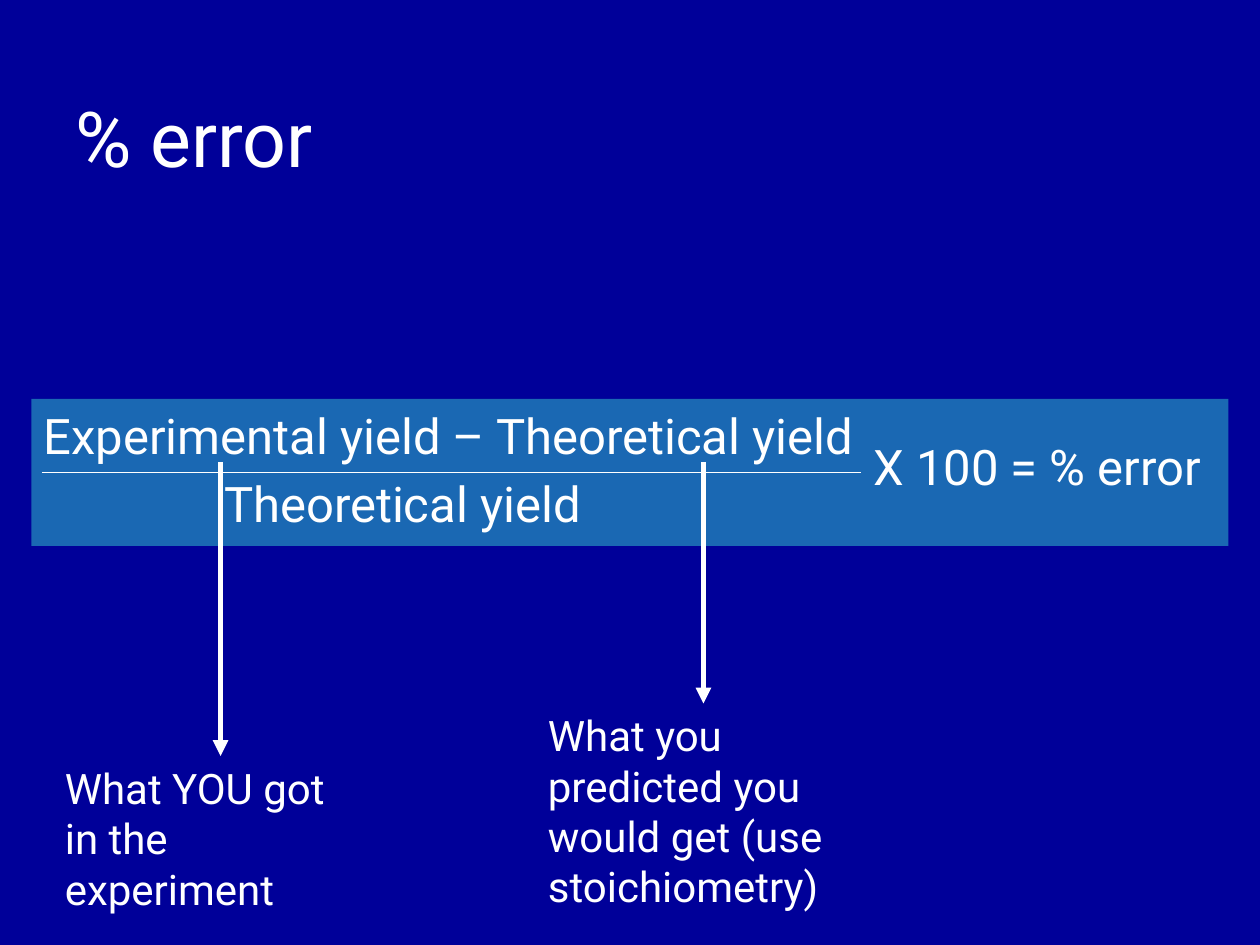
from lxml import etree
from pptx import Presentation, util as u
from pptx.dml.color import RGBColor
from pptx.enum import shapes, text
from pptx.oxml.ns import qn

COLUMNS, ROWS = 120, 90
CELL = u.Inches(10) // COLUMNS
FONT, WHITE, NAVY, TEAL = "Roboto", "FFFFFF", "000099", "33CCCC"


def color(value):
    """Turn a hex string into a colour."""
    return RGBColor.from_string(value)


def grid(*cells):
    """Turn grid cells into lengths."""
    return [cell * CELL for cell in cells]


def write(shape, content, size, anchor=text.MSO_ANCHOR.TOP):
    """Set left-aligned white text in a shape and return its paragraphs."""
    frame = shape.text_frame
    frame.text = content
    frame.word_wrap = True
    frame.vertical_anchor = anchor
    for paragraph in frame.paragraphs:
        paragraph.alignment = text.PP_ALIGN.LEFT
        for run in paragraph.runs:
            run.font.name = FONT
            run.font.size = u.Pt(size)
            run.font.color.rgb = color(WHITE)
    return frame.paragraphs


def add_line(slide, start, end, width, arrow=False):
    """Draw a white line between two grid points."""
    line = slide.shapes.add_connector(
        shapes.MSO_CONNECTOR.STRAIGHT, *grid(*start, *end))
    line.line.color.rgb = color(WHITE)
    line.line.width = u.Pt(width)
    if arrow:
        etree.SubElement(line.line._get_or_add_ln(), qn("a:tailEnd"), type="triangle")
    etree.SubElement(line._element.spPr, qn("a:effectLst"))


def add_title(slide, box, content):
    """Place the slide title."""
    write(slide.shapes.add_textbox(*grid(*box)), content, 44, text.MSO_ANCHOR.MIDDLE)


def add_formula(slide, box, numerator, denominator, result):
    """Place the fraction on its translucent band, with the result beside it."""
    left, top, width, height = box
    middle = top + height / 2
    band = slide.shapes.add_shape(shapes.MSO_SHAPE.RECTANGLE, *grid(*box))
    band.shadow.inherit = False
    band.fill.solid()
    band.fill.fore_color.rgb = color(TEAL)
    etree.SubElement(band.fill._xPr.find(".//" + qn("a:srgbClr")),
                     qn("a:alpha"), val="51000")
    band.line.fill.background()
    lower = write(band, f"{numerator}\n{denominator}", 28)[1]
    lower.space_before = u.Pt(5.6)
    lower._p.get_or_add_pPr().set("marL", str(u.Inches(1.43)))

    bar_end = left + 79
    add_line(slide, (left + 1, middle), (bar_end, middle), 0.75)
    side = slide.shapes.add_textbox(*grid(bar_end, middle - 4, 45, 7))
    write(side, result, 28)


def add_explanation(slide, box, arrow_top, content):
    """Place an explanation with an arrow pointing down to it."""
    left, top, width, height = box
    tip = left + 16
    add_line(slide, (tip, arrow_top), (tip, top), 3, arrow=True)
    write(slide.shapes.add_textbox(*grid(*box)), content, 24)


def main():
    """Build and save the slide."""
    presentation = Presentation()
    presentation.slide_width, presentation.slide_height = grid(COLUMNS, ROWS)
    slide = presentation.slides.add_slide(presentation.slide_layouts[6])
    slide.background.fill.solid()
    slide.background.fill.fore_color.rgb = color(NAVY)
    add_title(slide, (6, 4, 108, 18), "% error")
    add_formula(slide, (3, 38, 114, 14), "Experimental yield – Theoretical yield",
                "Theoretical yield", "X 100 = % error")
    add_explanation(slide, (5, 72, 31, 16), 44, "What YOU got in the experiment")
    add_explanation(slide, (51, 67, 33, 20), 44,
                    "What you predicted you would get (use stoichiometry)")
    presentation.save("out.pptx")


if __name__ == "__main__":
    main()
